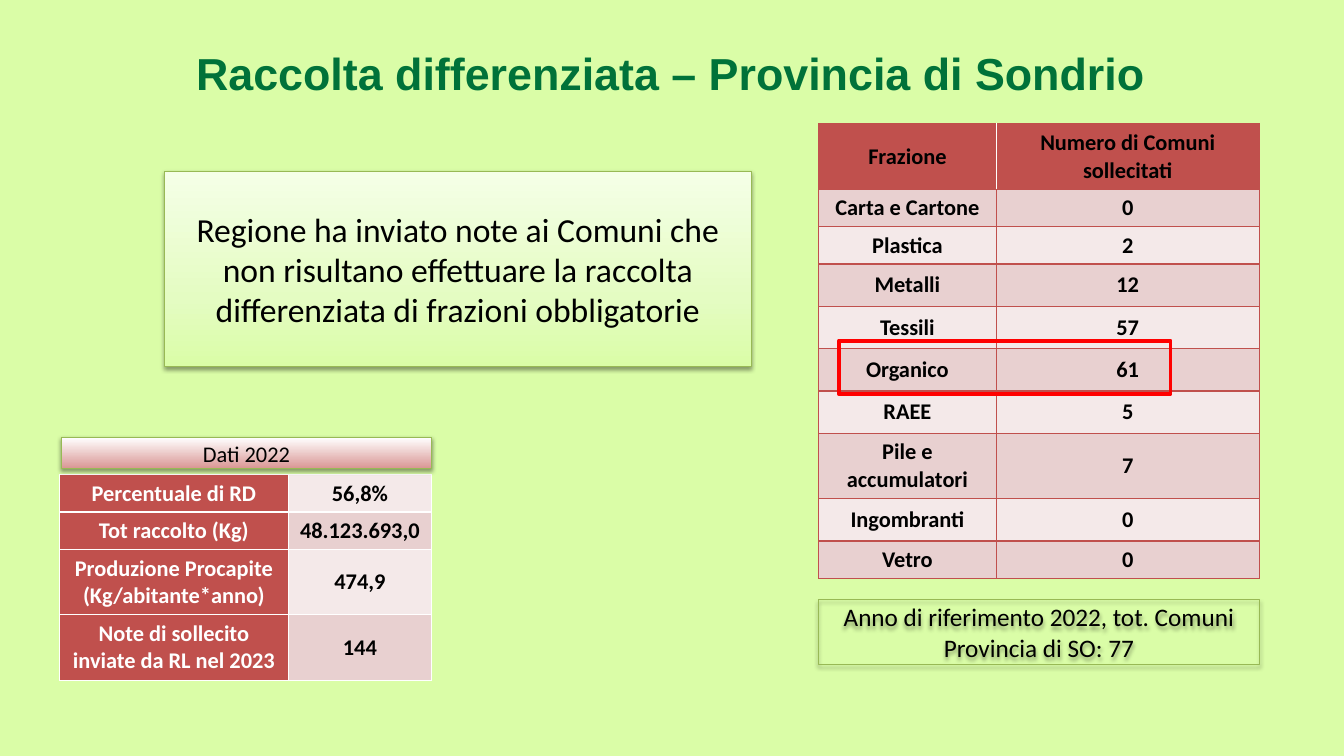
from copy import deepcopy
from lxml.etree import SubElement
from pptx import Presentation
from pptx.dml.color import RGBColor
from pptx.enum.shapes import MSO_SHAPE as Shape
from pptx.enum.text import MSO_ANCHOR as Anchor, PP_ALIGN as Align
from pptx.oxml.ns import qn
from pptx.util import Inches, Pt

RED, WHITE, BLACK = "C0504D", "FFFFFF", "000000"
BANDS = ["E8D0D0", "F4E9E9"]


def color(value):
    return RGBColor.from_string(value)


def write(text_frame, text, font_format):
    text_frame.word_wrap = True
    text_frame.vertical_anchor = Anchor.MIDDLE
    paragraph = text_frame.paragraphs[0]
    paragraph.text = text
    paragraph.alignment = Align.CENTER
    for name, value in font_format.items():
        if name == "color":
            paragraph.font.color.rgb = color(value)
        else:
            setattr(paragraph.font, name, value)


presentation = Presentation()
presentation.slide_width = Inches(13.33)
presentation.slide_height = Inches(7.5)
slide = presentation.slides.add_slide(presentation.slide_layouts[6])
slide.background.fill.solid()
slide.background.fill.fore_color.rgb = color("DAFDA7")

title = slide.shapes.add_textbox(Inches(0.98), Inches(0.31), Inches(11.35), Inches(0.82))
write(title.text_frame, "Raccolta differenziata – Provincia di Sondrio",
      {"name": "Arial", "size": Pt(32), "bold": True, "color": "007239"})

fractions = [
    ("Frazione", "Numero di Comuni sollecitati"),
    ("Carta e Cartone", "0"),
    ("Plastica", "2"),
    ("Metalli", "12"),
    ("Tessili", "57"),
    ("Organico", "61"),
    ("RAEE", "5"),
    ("Pile e accumulatori", "7"),
    ("Ingombranti", "0"),
    ("Vetro", "0"),
]
totals = [
    ("Percentuale di RD", "56,8%"),
    ("Tot raccolto (Kg)", "48.123.693,0"),
    ("Produzione Procapite (Kg/abitante*anno)", "474,9"),
    ("Note di sollecito inviate da RL nel 2023", "144"),
]
tables = [
    (fractions, 8.12, 1.23, [1.76, 2.61],
     [0.65, 0.37, 0.37, 0.42, 0.42, 0.42, 0.42, 0.65, 0.42, 0.37], RED, True),
    (totals, 0.59, 4.71, [2.27, 1.42], [0.37, 0.37, 0.65, 0.65], WHITE, False),
]
for rows, left, top, widths, heights, border, has_header in tables:
    table = slide.shapes.add_table(
        len(rows), len(widths), Inches(left), Inches(top),
        Inches(sum(widths)), Inches(sum(heights))).table
    table.first_row = has_header
    table.first_col = not has_header
    for column, width in zip(table.columns, widths):
        column.width = Inches(width)
    for row, height in zip(table.rows, heights):
        row.height = Inches(height)
    for row_index, texts in enumerate(rows):
        for column_index, text in enumerate(texts):
            cell = table.cell(row_index, column_index)
            heading = row_index == 0 if has_header else column_index == 0
            inner_side = "R" if column_index == 0 else "L"
            properties = cell._tc.get_or_add_tcPr()
            for side in "LRTB":
                divider = has_header and heading and side == inner_side
                line = SubElement(properties, qn(f"a:ln{side}"), w=str(Pt(1)))
                fill = SubElement(line, qn("a:solidFill"))
                SubElement(fill, qn("a:srgbClr"), val=WHITE if divider else border)
            cell.fill.solid()
            band = BANDS[(row_index + 1) % 2]
            cell.fill.fore_color.rgb = color(RED if heading else band)
            text_color = WHITE if heading and not has_header else BLACK
            write(cell.text_frame, text,
                  {"name": "Calibri", "size": Pt(16), "bold": True, "color": text_color})
            cell.vertical_anchor = Anchor.MIDDLE

green_stops = [(0, "DAFDA7"), (0.35, "E4FCC2"), (1, "F5FFE7")]
pink_stops = [(0, "D99694"), (1, WHITE)]
boxes = [
    (8.12, 5.95, 4.37, 0.64, [], 18,
     "Anno di riferimento 2022, tot. Comuni Provincia di SO: 77"),
    (1.63, 1.7, 5.82, 1.94, green_stops, 24,
     "Regione ha inviato note ai Comuni che non risultano effettuare "
     "la raccolta differenziata di frazioni obbligatorie"),
    (0.61, 4.34, 3.67, 0.31, pink_stops, 16, "Dati 2022"),
]
for left, top, width, height, stops, size, text in boxes:
    box = slide.shapes.add_shape(
        Shape.RECTANGLE, Inches(left), Inches(top), Inches(width), Inches(height))
    box.fill.background()
    if stops:
        box.fill.gradient()
        box.fill.gradient_angle = 90
        stop_list = box._element.spPr.find(".//" + qn("a:gsLst"))
        for _ in stops[2:]:
            stop_list.append(deepcopy(stop_list[0]))
        for stop, (position, value) in zip(box.fill.gradient_stops, stops):
            stop.position = position
            stop.color.rgb = color(value)
    box.line.color.rgb = color("98B955")
    box.line.width = Pt(0.75)
    box.shadow.inherit = False
    effects = box._element.spPr.find(qn("a:effectLst"))
    shadow = SubElement(effects, qn("a:outerShdw"), blurRad=str(Pt(3.1)),
                        dist=str(Pt(1.6)), dir="5400000", rotWithShape="0")
    shadow_color = SubElement(shadow, qn("a:srgbClr"), val=BLACK)
    SubElement(shadow_color, qn("a:alpha"), val="38000")
    write(box.text_frame, text, {"name": "Calibri", "size": Pt(size), "color": BLACK})

highlight = slide.shapes.add_shape(
    Shape.RECTANGLE, Inches(8.32), Inches(3.38), Inches(3.29), Inches(0.53))
highlight.fill.background()
highlight.line.color.rgb = color("FF0000")
highlight.line.width = Pt(2.75)
highlight.shadow.inherit = False

presentation.save("out.pptx")
